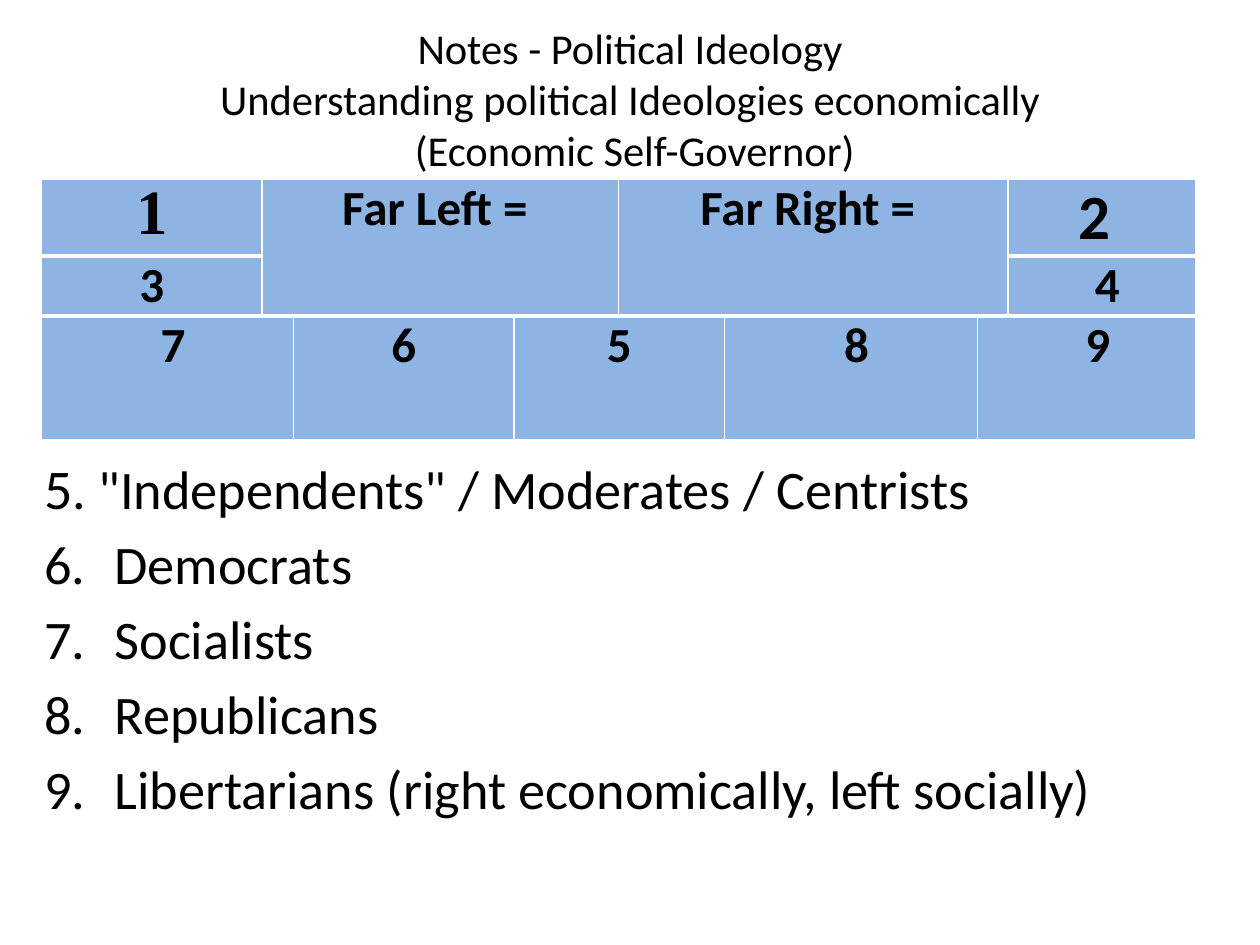
from lxml.etree import SubElement
from pptx import Presentation
from pptx.dml.color import RGBColor
from pptx.enum.text import MSO_ANCHOR, MSO_AUTO_SIZE, PP_ALIGN
from pptx.oxml.ns import qn
from pptx.util import Inches, Pt

COLORS = {"text": "000000", "cell": "8EB4E3", "border": "FFFFFF"}
COLUMN_WIDTHS = [1.75, 0.25, 1.75, 0.83, 0.84, 2.01, 0.24, 1.49]
ROW_HEIGHTS = [0.6, 0.47, 0.98]
SPECTRUM = [
    (0, 0, 1, 1, "1", 36, "Times New Roman"),
    (0, 1, 2, 3, "Far Left = ", 28, "Calibri"),
    (0, 4, 2, 3, "Far Right = ", 28, "Calibri"),
    (0, 7, 1, 1, "2 ", 36, "Calibri"),
    (1, 0, 1, 1, "3", 28, "Calibri"),
    (1, 7, 1, 1, " 4", 28, "Calibri"),
    (2, 0, 1, 2, " 7", 28, "Calibri"),
    (2, 2, 1, 1, "6", 28, "Calibri"),
    (2, 3, 1, 2, "5", 28, "Calibri"),
    (2, 5, 1, 1, " 8", 28, "Calibri"),
    (2, 6, 1, 2, "  9", 28, "Calibri"),
]
HEADING = [
    "Notes - Political Ideology",
    "Understanding political Ideologies economically",
    " (Economic Self-Governor)",
]
GROUPS = [
    "Democrats",
    "Socialists",
    "Republicans",
    "Libertarians (right economically, left socially)",
]


class IdeologySlide:
    def __init__(self, presentation):
        self.slide = presentation.slides.add_slide(presentation.slide_layouts[0])

    def run(self, paragraph, text, size, font="Calibri", bold=False):
        run = paragraph.add_run()
        run.text = text
        run.font.size = Pt(size)
        run.font.name = font
        run.font.bold = bold
        run.font.color.rgb = RGBColor.from_string(COLORS["text"])

    def place(self, placeholder, left, top, width, height):
        placeholder.left, placeholder.top = Inches(left), Inches(top)
        placeholder.width, placeholder.height = Inches(width), Inches(height)
        frame = placeholder.text_frame
        frame.word_wrap = True
        frame.auto_size = MSO_AUTO_SIZE.NONE
        return frame

    def title(self, lines):
        frame = self.place(self.slide.shapes.title, 0.75, 0.5, 8.5, 1.17)
        frame.vertical_anchor = MSO_ANCHOR.BOTTOM
        frame.margin_bottom = Inches(0.28)
        heading = frame.paragraphs[0]
        heading.alignment = PP_ALIGN.CENTER
        for index, line in enumerate(lines):
            if index:
                heading.add_line_break()
            self.run(heading, line, 24.3)

    def numbered_list(self, groups, start):
        frame = self.place(self.slide.placeholders[1], 0.25, 3.5, 9.42, 3.42)
        frame.vertical_anchor = MSO_ANCHOR.TOP
        frame.margin_top = Inches(0.1)
        centrists = frame.paragraphs[0]
        centrists.alignment = PP_ALIGN.LEFT
        centrists.space_before = Pt(0)
        self.run(centrists, "5", 32)
        self.run(centrists, '. "Independents" / Moderates / Centrists', 31)
        for group in groups:
            entry = frame.add_paragraph()
            properties = entry._p.get_or_add_pPr()
            properties.set("marL", str(Inches(0.56)))
            properties.set("indent", str(-Inches(0.56)))
            SubElement(properties, qn("a:buFont"), typeface="+mj-lt")
            SubElement(properties, qn("a:buAutoNum"), type="arabicPeriod", startAt=str(start))
            entry.alignment = PP_ALIGN.LEFT
            entry.space_before = Pt(5.6)
            self.run(entry, group, 31)

    def borders(self, cell, top, bottom):
        properties = cell._tc.get_or_add_tcPr()
        for side, width in (("L", 1), ("R", 1), ("T", top), ("B", bottom)):
            line = SubElement(properties, qn(f"a:ln{side}"), w=str(Pt(width)))
            fill = SubElement(line, qn("a:solidFill"))
            SubElement(fill, qn("a:srgbClr"), val=COLORS["border"])

    def table(self, left, top, widths, heights, entries):
        table = self.slide.shapes.add_table(
            len(heights), len(widths), Inches(left), Inches(top),
            Inches(sum(widths)), Inches(sum(heights)),
        ).table
        for column, width in zip(table.columns, widths):
            column.width = Inches(width)
        last = len(heights) - 1
        for index, (row, height) in enumerate(zip(table.rows, heights)):
            row.height = Inches(height)
            for cell in row.cells:
                self.borders(cell, 3 if index else 1, 3 if index < last else 1)
                cell.fill.solid()
                cell.fill.fore_color.rgb = RGBColor.from_string(COLORS["cell"])
                cell.margin_left = cell.margin_right = Inches(0.07)
                cell.margin_top = cell.margin_bottom = 0
        for row, column, row_span, column_span, text, size, font in entries:
            cell = table.cell(row, column)
            if row_span * column_span > 1:
                cell.merge(table.cell(row + row_span - 1, column + column_span - 1))
            label = cell.text_frame.paragraphs[0]
            label.alignment = PP_ALIGN.CENTER
            self.run(label, text, size, font, bold=True)


def main():
    presentation = Presentation()
    presentation.slide_width, presentation.slide_height = Inches(10), Inches(7.5)
    ideology = IdeologySlide(presentation)
    ideology.table(0.33, 1.42, COLUMN_WIDTHS, ROW_HEIGHTS, SPECTRUM)
    ideology.title(HEADING)
    ideology.numbered_list(GROUPS, start=6)
    presentation.save("out.pptx")


if __name__ == "__main__":
    main()
